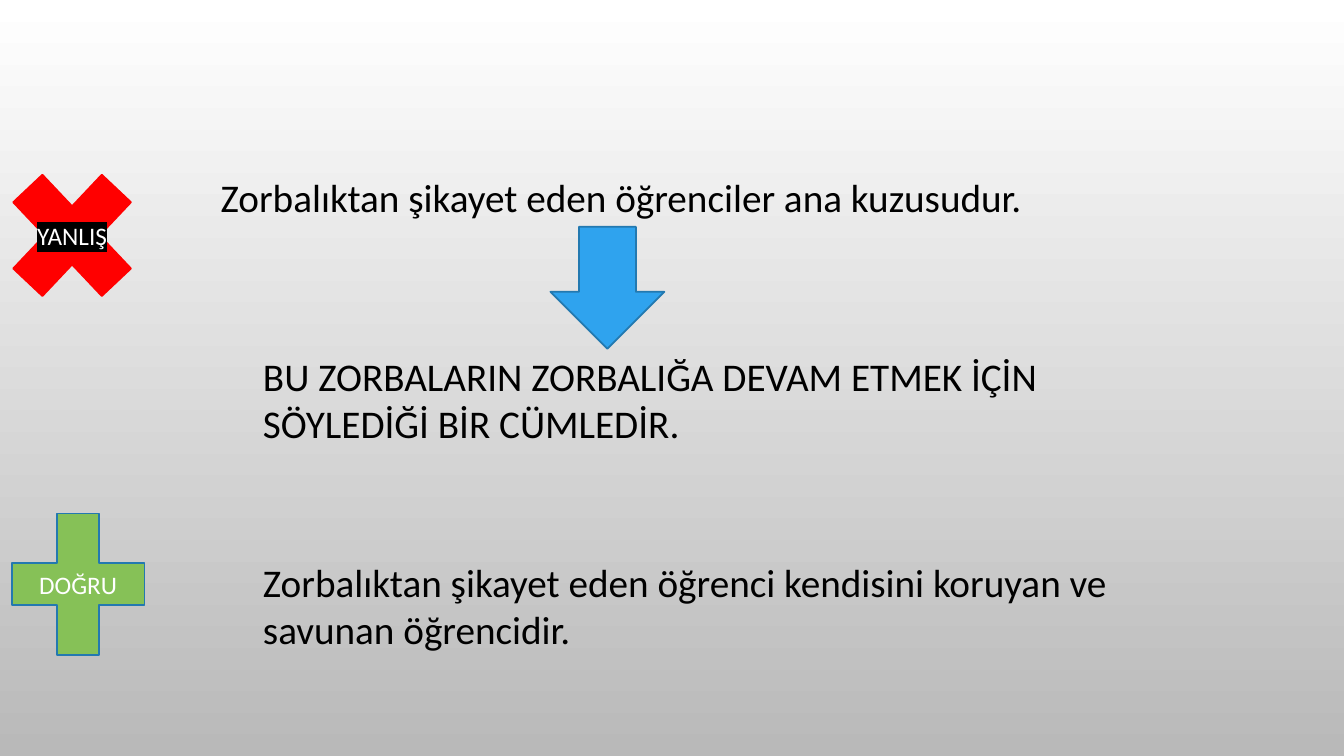
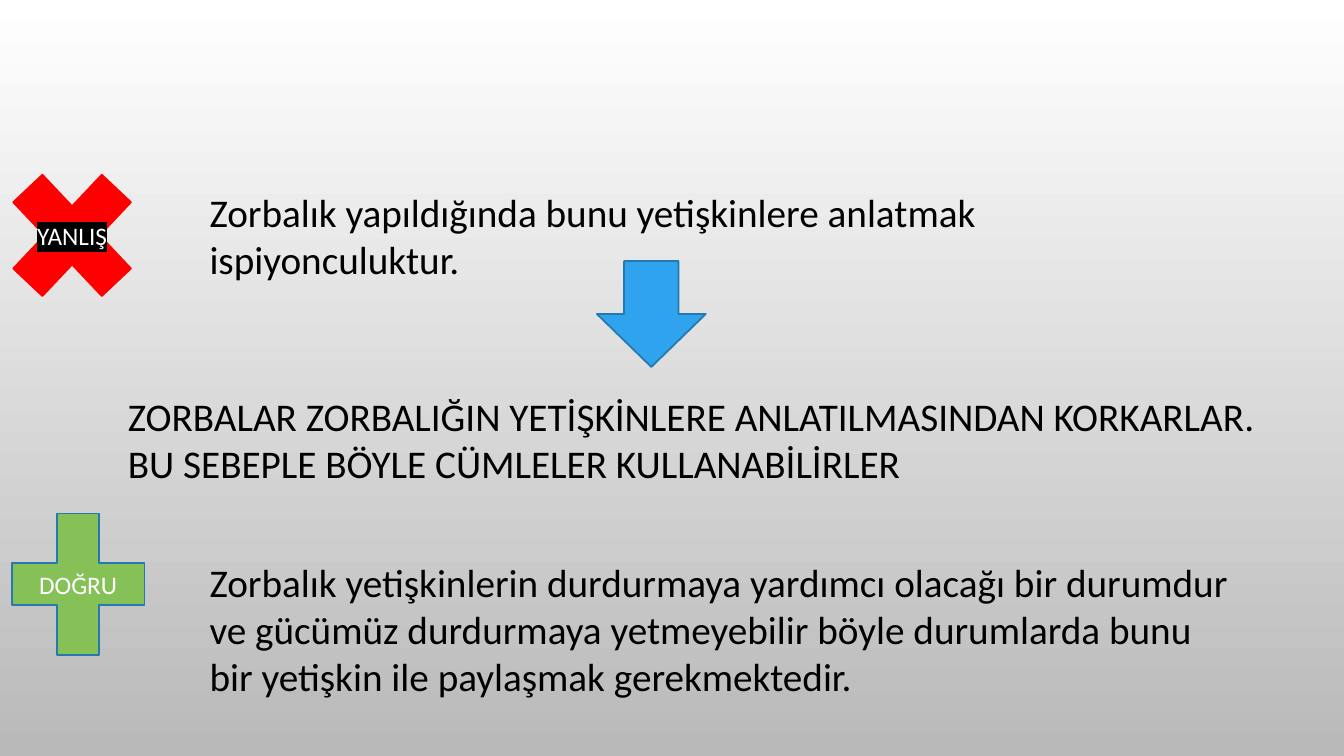
from lxml.etree import Element, SubElement
from pptx import Presentation
from pptx.dml.color import RGBColor
from pptx.enum.shapes import MSO_SHAPE
from pptx.enum.text import MSO_ANCHOR, MSO_AUTO_SIZE, PP_ALIGN
from pptx.oxml.ns import qn
from pptx.util import Inches, Pt

BLACK, WHITE, GREY = "000000", "FFFFFF", "B9B9B9"
RED, GREEN, BLUE, EDGE = "FF0000", "86C157", "2FA3EE", "2379B0"


def tint(code):
    return RGBColor.from_string(code)


def apply(item, style):
    for name, value in style.items():
        setattr(item, name, value)


class Deck:
    text = {"name": "Calibri", "size": Pt(28)}
    label = {"name": "Calibri", "size": Pt(18)}
    note = {"word_wrap": True, "auto_size": MSO_AUTO_SIZE.SHAPE_TO_FIT_TEXT}
    badge = {"word_wrap": True, "vertical_anchor": MSO_ANCHOR.MIDDLE}

    def __init__(self):
        self.show = Presentation()
        apply(self.show, {"slide_width": Inches(13.33),
                          "slide_height": Inches(7.5)})
        fill = self.show.slide_master.background.fill
        fill.gradient()
        fill.gradient_angle = 270
        for stop, code, place in zip(fill.gradient_stops, (WHITE, GREY), (0, 1)):
            stop.color.rgb = tint(code)
            stop.position = place
        self.slide = None

    def page(self):
        self.slide = self.show.slides.add_slide(self.show.slide_layouts[6])

    def put(self, frame, words, style, code):
        run = frame.paragraphs[0].add_run()
        run.text = words
        apply(run.font, style)
        run.font.color.rgb = tint(code)
        return run

    def line(self, words, box):
        frame = self.slide.shapes.add_textbox(*map(Inches, box)).text_frame
        apply(frame, self.note)
        self.put(frame, words, self.text, BLACK)

    def shape(self, kind, box, fill, edge):
        form = self.slide.shapes.add_shape(kind, *map(Inches, box))
        form.shadow.inherit = False
        form.fill.solid()
        form.fill.fore_color.rgb = tint(fill)
        form.line.color.rgb = tint(edge)
        form.line.width = Pt(1.25)
        return form

    def mark(self, words, kind, box, fill, edge, back=None):
        frame = self.shape(kind, box, fill, edge).text_frame
        apply(frame, self.badge)
        frame.paragraphs[0].alignment = PP_ALIGN.CENTER
        run = self.put(frame, words, self.label, WHITE)
        if back:
            glow = Element(qn("a:highlight"))
            SubElement(glow, qn("a:srgbClr")).set("val", back)
            run.font._element.find(qn("a:solidFill")).addnext(glow)

    def arrow(self, box):
        self.shape(MSO_SHAPE.DOWN_ARROW, box, BLUE, EDGE)

    def marks(self):
        self.mark("YANLIŞ", MSO_SHAPE.MATH_MULTIPLY,
                  (-0.13, 1.44, 1.69, 1.79), RED, RED, BLACK)
        self.mark("DOĞRU", MSO_SHAPE.MATH_PLUS,
                  (-0.12, 4.84, 1.79, 1.91), GREEN, EDGE)


PAGES = [
    {"arrow": (5.46, 2.25, 1.13, 1.21),
     "lines": [
         ("Zorbalıktan şikayet eden öğrenciler ana kuzusudur.",
          (2.09, 1.67, 8.41, 0.57)),
         ("BU ZORBALARIN ZORBALIĞA DEVAM ETMEK İÇİN SÖYLEDİĞİ BİR CÜMLEDİR.",
          (2.51, 3.45, 8.32, 1.04)),
         ("Zorbalıktan şikayet eden öğrenci kendisini koruyan ve savunan "
          "öğrencidir.", (2.51, 5.49, 9.05, 1.04))]},
    {"arrow": (5.92, 2.59, 1.08, 1.05),
     "lines": [
         ("Zorbalık yapıldığında bunu yetişkinlere anlatmak ispiyonculuktur.",
          (1.98, 1.82, 10.33, 1.04)),
         ("ZORBALAR ZORBALIĞIN YETİŞKİNLERE ANLATILMASINDAN KORKARLAR. "
          "BU SEBEPLE BÖYLE CÜMLELER KULLANABİLİRLER",
          (1.17, 3.84, 11.57, 1.04)),
         ("Zorbalık yetişkinlerin durdurmaya yardımcı olacağı bir durumdur ve "
          "gücümüz durdurmaya yetmeyebilir böyle durumlarda bunu bir yetişkin "
          "ile paylaşmak gerekmektedir.", (1.98, 5.49, 10.41, 1.51))]},
]


def main():
    deck = Deck()
    for page in PAGES:
        deck.page()
        deck.marks()
        for words, box in page["lines"]:
            deck.line(words, box)
        deck.arrow(page["arrow"])
    deck.show.save("out.pptx")


if __name__ == "__main__":
    main()
